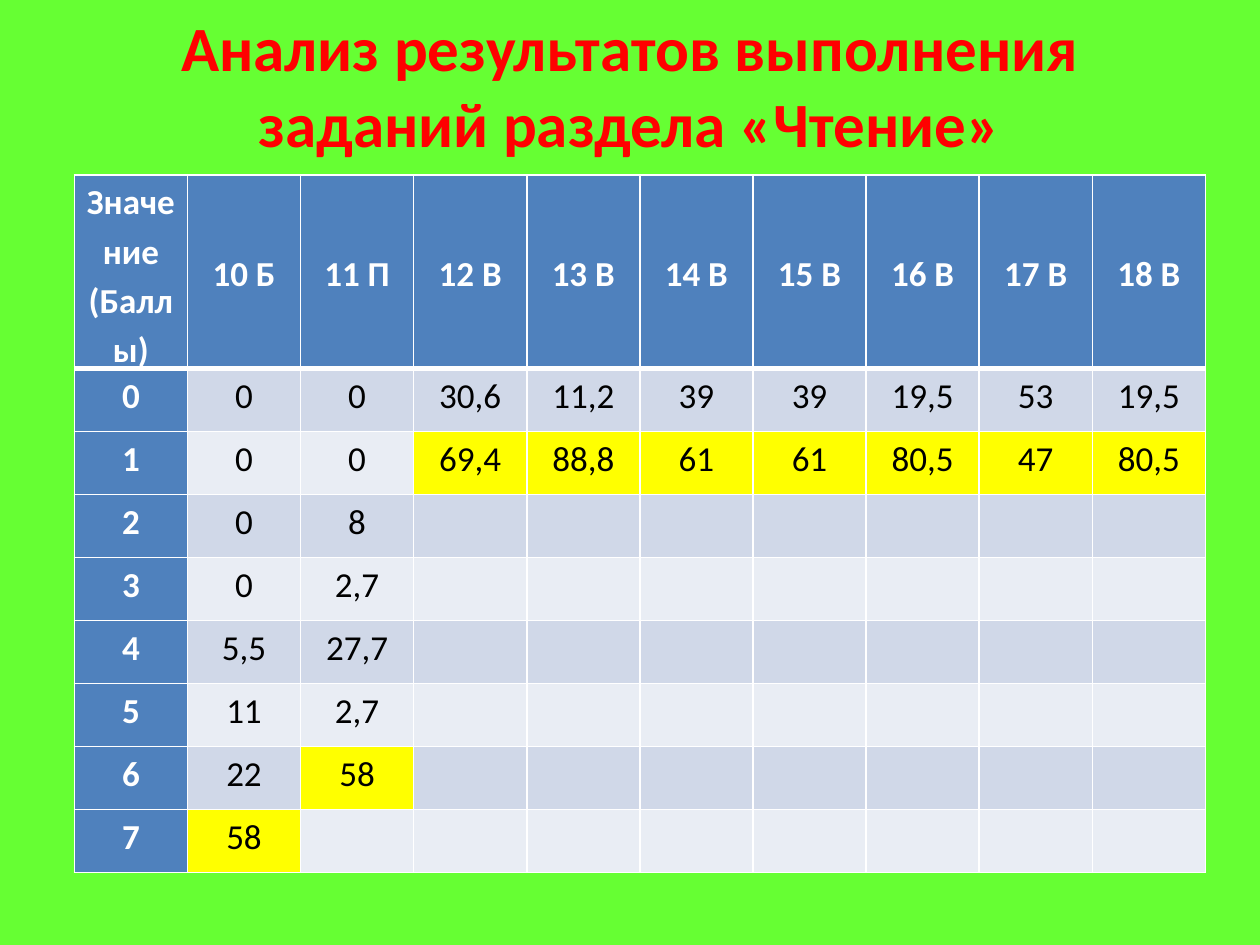
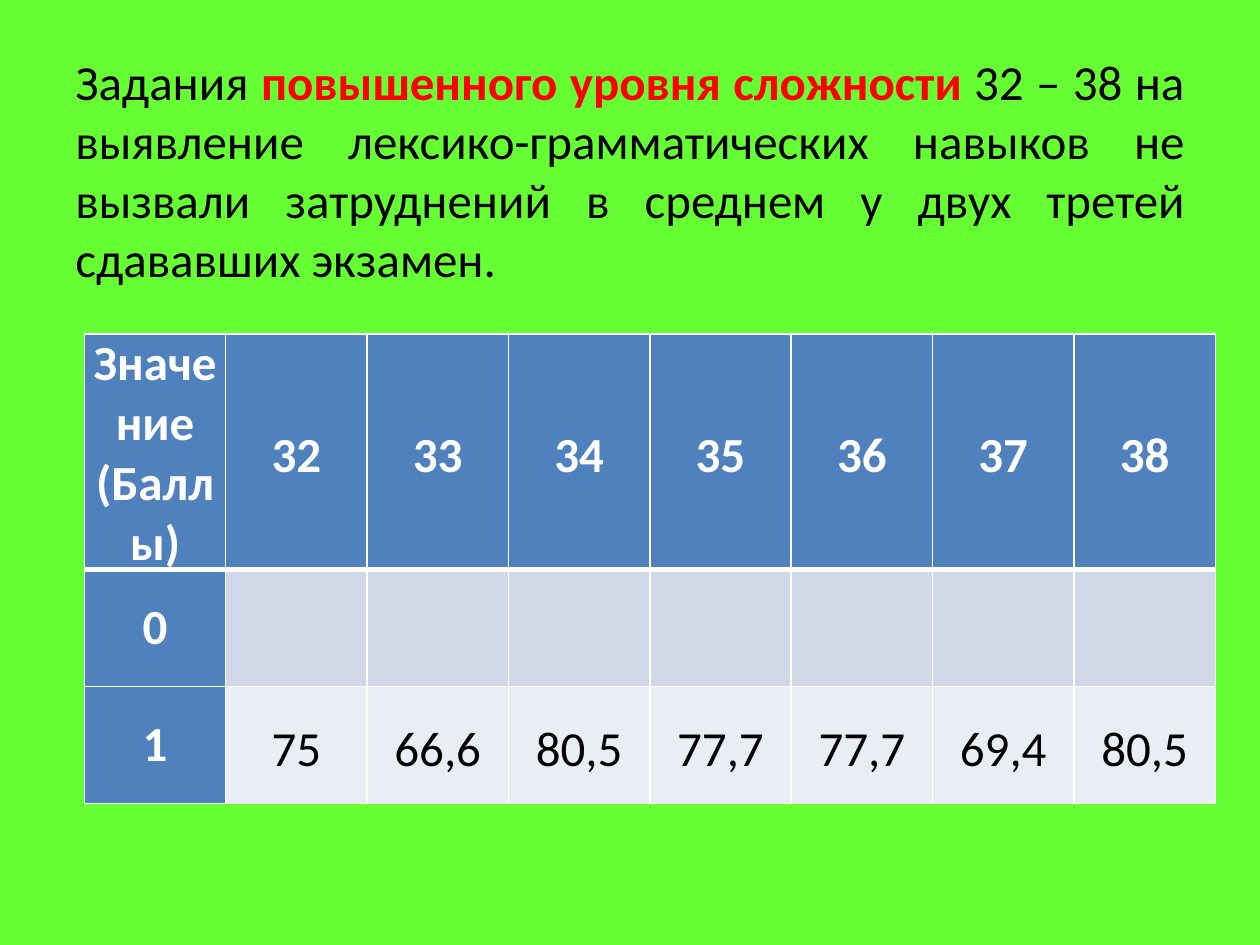
from dataclasses import dataclass
from typing import NamedTuple

from lxml.etree import Element, SubElement
from pptx import Presentation
from pptx.dml.color import RGBColor
from pptx.enum.text import MSO_VERTICAL_ANCHOR as Anchor, PP_PARAGRAPH_ALIGNMENT as Align
from pptx.oxml.ns import qn
from pptx.util import Pt

FONT = "Calibri"
GREEN, RED, BLACK, WHITE = "66FF33", "FF0000", "000000", "FFFFFF"
BLUE, YELLOW = "4F81BD", "FFFF00"
BANDS = ("D0D8E8", "E9EDF4")
THIN, THICK = 1, 3


class Box(NamedTuple):
    """Place and size in points."""
    left: float
    top: float
    width: float
    height: float


class Phrase(NamedTuple):
    """Words that share one look."""
    text: str
    color: str = BLACK
    bold: bool = False


@dataclass(frozen=True)
class TextBlock:
    """One paragraph in a text box."""
    box: Box
    phrases: tuple[Phrase, ...]
    size: float
    align: Align
    anchor: Anchor = Anchor.TOP
    space_before: float = 0


@dataclass(frozen=True)
class ScoreTable:
    """Share of pupils for each task and score."""
    left: float
    top: float
    width: float
    header_height: float
    row_height: float
    size: float
    tasks: tuple[str, ...]
    scores: tuple[tuple[str, ...], ...]
    anchor: Anchor = Anchor.TOP
    label_spacing: float = 1.15
    highlights: frozenset[tuple[int, int]] = frozenset()


READING_TITLE = TextBlock(
    Box(36, 3, 648, 90),
    (Phrase("Анализ результатов выполнения заданий раздела «Чтение»", RED, True),),
    36, Align.CENTER, Anchor.MIDDLE)

READING_TABLE = ScoreTable(
    42.5, 100, 646.5, 99.4, 36, 20,
    ("10 Б", "11 П", "12 В", "13 В", "14 В", "15 В", "16 В", "17 В", "18 В"),
    (("0", "0", "30,6", "11,2", "39", "39", "19,5", "53", "19,5"),
     ("0", "0", "69,4", "88,8", "61", "61", "80,5", "47", "80,5"),
     ("0", "8"),
     ("0", "2,7"),
     ("5,5", "27,7"),
     ("11", "2,7"),
     ("22", "58"),
     ("58",)),
    highlights=frozenset({(2, column) for column in range(3, 10)} | {(7, 2), (8, 1)}))

GRAMMAR_TEXT = TextBlock(
    Box(36, 26, 648, 456.5),
    (Phrase("Задания "),
     Phrase("повышенного уровня сложности ", RED, True),
     Phrase("32 – 38 на выявление лексико-грамматических навыков не вызвали "
            "затруднений в среднем у двух третей сдававших экзамен.")),
    28, Align.JUSTIFY, space_before=5.6)

GRAMMAR_TABLE = ScoreTable(
    48.2, 190.8, 646.5, 93, 67, 28,
    tuple(str(task) for task in range(32, 39)),
    ((), ("75", "66,6", "80,5", "77,7", "77,7", "69,4", "80,5")),
    anchor=Anchor.MIDDLE, label_spacing=1)


def rgb(color: str) -> RGBColor:
    """Turn a hex string into a colour."""
    return RGBColor.from_string(color)


def style_run(run, size: float, color: str, bold: bool) -> None:
    """Set the font of a run."""
    run.font.name = FONT
    run.font.size = Pt(size)
    run.font.bold = bold
    run.font.color.rgb = rgb(color)


def draw_text(slide, block: TextBlock) -> None:
    """Draw a text box made of phrases."""
    text_frame = slide.shapes.add_textbox(*map(Pt, block.box)).text_frame
    text_frame.word_wrap = True
    text_frame.vertical_anchor = block.anchor
    paragraph = text_frame.paragraphs[0]
    paragraph.alignment = block.align
    paragraph.space_before = Pt(block.space_before)
    for phrase in block.phrases:
        run = paragraph.add_run()
        run.text = phrase.text
        style_run(run, block.size, phrase.color, phrase.bold)


def draw_borders(cell, top: float, bottom: float) -> None:
    """Give a cell white borders."""
    properties = cell._tc.get_or_add_tcPr()
    widths = {"a:lnL": THIN, "a:lnR": THIN, "a:lnT": top, "a:lnB": bottom}
    for index, (tag, width) in enumerate(widths.items()):
        line = Element(qn(tag), w=str(Pt(width)))
        fill = SubElement(line, qn("a:solidFill"))
        SubElement(fill, qn("a:srgbClr"), val=WHITE)
        properties.insert(index, line)


def fill_cell(cell, row: int, column: int, text: str, data: ScoreTable) -> None:
    """Write and colour one cell."""
    is_label = row == 0 or column == 0
    color = BLUE if is_label else BANDS[(row - 1) % 2]
    if (row, column) in data.highlights:
        color = YELLOW
    cell.fill.solid()
    cell.fill.fore_color.rgb = rgb(color)
    draw_borders(cell, THICK if row == 1 else THIN, THICK if row == 0 else THIN)
    if not text:
        return
    cell.margin_left = cell.margin_right = Pt(5)
    cell.margin_top = cell.margin_bottom = Pt(0)
    cell.vertical_anchor = Anchor.MIDDLE if row == 0 else data.anchor
    paragraph = cell.text_frame.paragraphs[0]
    paragraph.text = text
    paragraph.alignment = Align.CENTER
    paragraph.line_spacing = data.label_spacing if column == 0 else 1.15
    style_run(paragraph.runs[0], data.size, WHITE if is_label else BLACK, is_label)


def draw_table(slide, data: ScoreTable) -> None:
    """Draw a table of scores by task."""
    rows = [("Значение (Баллы)", *data.tasks)]
    rows += [(str(score), *values) for score, values in enumerate(data.scores)]
    column_count = len(rows[0])
    height = data.header_height + data.row_height * len(data.scores)
    box = Box(data.left, data.top, data.width, height)
    table = slide.shapes.add_table(len(rows), column_count, *map(Pt, box)).table
    for column in table.columns:
        column.width = Pt(data.width / column_count)
    for row_index, texts in enumerate(rows):
        table.rows[row_index].height = Pt(data.row_height if row_index else data.header_height)
        for column_index in range(column_count):
            text = texts[column_index] if column_index < len(texts) else ""
            fill_cell(table.cell(row_index, column_index), row_index, column_index, text, data)


def main() -> None:
    """Build and save the presentation."""
    presentation = Presentation()
    presentation.slide_width, presentation.slide_height = Pt(720), Pt(540)
    for block, data in ((READING_TITLE, READING_TABLE), (GRAMMAR_TEXT, GRAMMAR_TABLE)):
        slide = presentation.slides.add_slide(presentation.slide_layouts[6])
        slide.background.fill.solid()
        slide.background.fill.fore_color.rgb = rgb(GREEN)
        draw_text(slide, block)
        draw_table(slide, data)
    presentation.save("out.pptx")


if __name__ == "__main__":
    main()
